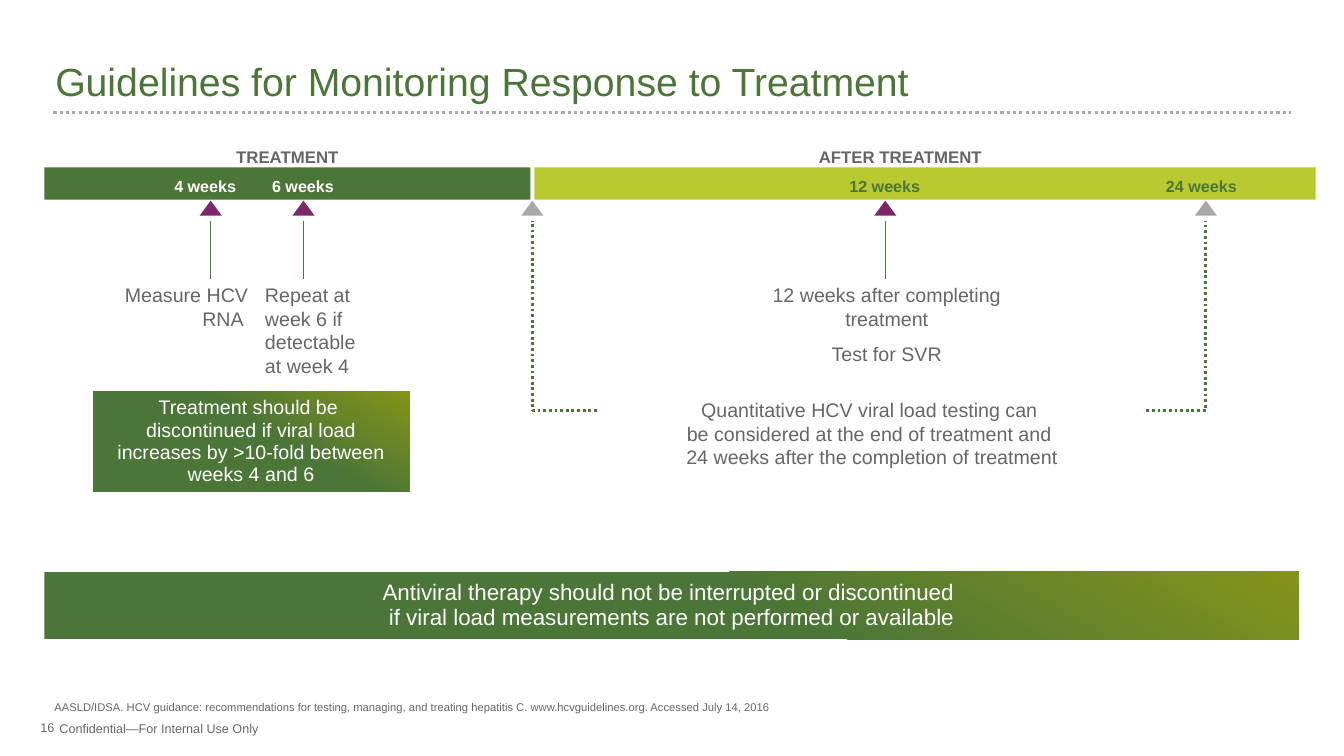
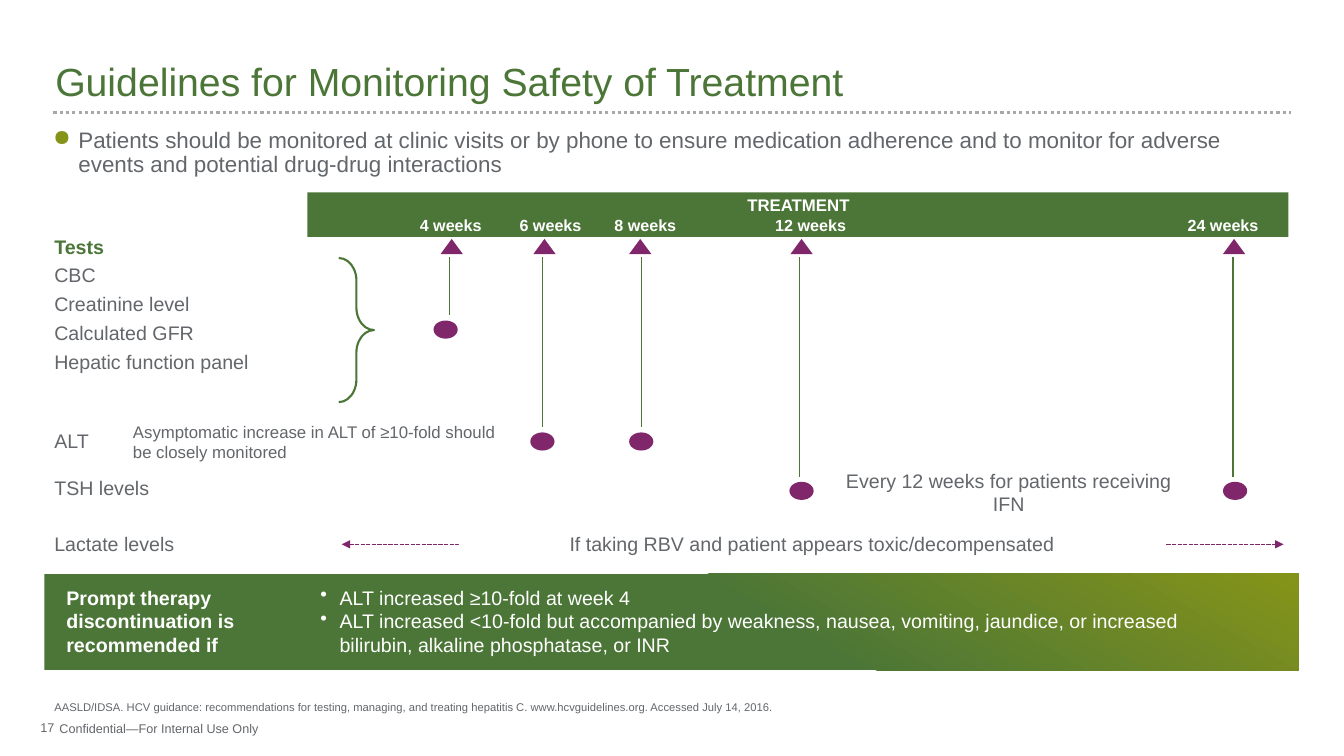
"""Build two slides on monitoring hepatitis C treatment, laid out on a grid of 0.1 inch cells."""
import copy
import dataclasses

import pptx
import pptx.dml.color
import pptx.enum.dml
import pptx.enum.shapes
import pptx.enum.text
import pptx.oxml.ns
import pptx.util

SHAPE = pptx.enum.shapes.MSO_SHAPE
ALIGN = pptx.enum.text.PP_ALIGN
ANCHOR = pptx.enum.text.MSO_ANCHOR
DASH = pptx.enum.dml.MSO_LINE
qn = pptx.oxml.ns.qn


@dataclasses.dataclass(frozen=True)
class Theme:
    font: str = "Arial"
    green: str = "4C7637"
    lime: str = "B8CA30"
    olive: str = "859419"
    plum: str = "80276C"
    grey: str = "A7A8AA"
    ink: str = "63666A"
    white: str = "FFFFFF"
    title: float = 28
    lead: float = 16
    body: float = 14
    small: float = 12
    week: float = 11.5
    footer: float = 9
    source: float = 8


T = Theme()
COLS, ROWS = 133.3, 75
DEFAULT_INSETS = (1, 0.5, 1, 0.5)
NO_INSETS = (0, 0, 0, 0)
CENTRE = {"alignment": ALIGN.CENTER}
TIGHT = {"line_spacing": 0.9}
PANEL_FORMAT = {"alignment": ALIGN.CENTER, "line_spacing": 0.95}
PANEL_FILL = (T.green, T.olive)
MARKER_W, MARKER_H = 2.2, 1.5
DOT_W, DOT_H = 2.4, 1.8
WEEK_W, WEEK_H = 10.9, 2


def cells(*values):
    return [pptx.util.Inches(v / 10) for v in values]


def rgb(color):
    return pptx.dml.color.RGBColor.from_string(color)


def set_all(obj, values):
    for name, value in values.items():
        setattr(obj, name, value)


def add_bullet(p, char, color, indent):
    pPr = p._p.get_or_add_pPr()
    hang = cells(indent)[0]
    pPr.set("marL", str(hang))
    pPr.set("indent", str(-hang))
    buClr = pPr.makeelement(qn("a:buClr"), {})
    buClr.append(buClr.makeelement(qn("a:srgbClr"), {"val": color}))
    pPr.append(buClr)
    pPr.append(pPr.makeelement(qn("a:buChar"), {"char": char}))


def write(tf, lines, size, color, bold=False, insets=DEFAULT_INSETS,
          anchor=ANCHOR.TOP, para=None, gap=0, bullet=None):
    left, top, right, bottom = cells(*insets)
    set_all(tf, {"word_wrap": True, "vertical_anchor": anchor,
                 "margin_left": left, "margin_top": top,
                 "margin_right": right, "margin_bottom": bottom})
    for i, line in enumerate(lines):
        p = tf.add_paragraph() if i else tf.paragraphs[0]
        p.text = line
        if bullet:
            add_bullet(p, *bullet)
        set_all(p, {"alignment": ALIGN.LEFT, **(para or {})})
        if i and gap:
            p.space_before = pptx.util.Pt(gap)
        for r in p.runs:
            set_all(r.font, {"name": T.font, "size": pptx.util.Pt(size), "bold": bold})
            r.font.color.rgb = rgb(color)
        for br in p._p.findall(qn("a:br")):
            br.append(copy.deepcopy(p.runs[0]._r.rPr))


def add_text(s, box, lines, size=T.body, color=T.ink, **fmt):
    sp = s.shapes.add_textbox(*cells(*box))
    write(sp.text_frame, [lines] if isinstance(lines, str) else lines, size, color, **fmt)


def style_line(line, color, width, dash=None):
    line.color.rgb = rgb(color)
    set_all(line, {"width": pptx.util.Pt(width), "dash_style": dash})


def add_block(s, kind, box, fill):
    sp = s.shapes.add_shape(kind, *cells(*box))
    sp.shadow.inherit = False
    sp.line.fill.background()
    if fill is None:
        sp.fill.background()
    elif isinstance(fill, tuple):
        sp.fill.gradient()
        sp.fill.gradient_angle = 60
        for stop, position, color in zip(sp.fill.gradient_stops, (0.57, 1), fill):
            stop.color.rgb = rgb(color)
            stop.position = position
    else:
        sp.fill.solid()
        sp.fill.fore_color.rgb = rgb(fill)
    return sp


def add_panel(s, box, text, size):
    sp = add_block(s, SHAPE.RECTANGLE, box, PANEL_FILL)
    write(sp.text_frame, [text], size, T.white, anchor=ANCHOR.MIDDLE, para=PANEL_FORMAT)


def add_line(s, start, end, color, width, dash=None, arrows=False):
    cn = s.shapes.add_connector(pptx.enum.shapes.MSO_CONNECTOR.STRAIGHT,
                                *cells(*start, *end))
    style_line(cn.line, color, width, dash)
    spPr = cn._element.spPr
    if arrows:
        ln = cn.line._get_or_add_ln()
        for tag in ("a:headEnd", "a:tailEnd"):
            ln.append(ln.makeelement(qn(tag), {"type": "triangle"}))
    spPr.append(spPr.makeelement(qn("a:effectLst"), {}))


def add_bracket(s, inner_x, outer_x, top, bottom):
    first, *rest = [cells(*pt) for pt in
                    ((inner_x, bottom), (outer_x, bottom), (outer_x, top))]
    builder = s.shapes.build_freeform(*first, scale=1.0)
    builder.add_line_segments(rest, close=False)
    sp = builder.convert_to_shape()
    sp.shadow.inherit = False
    sp.fill.background()
    style_line(sp.line, T.green, 2, DASH.ROUND_DOT)


def add_marker(s, x, top, color=T.plum):
    add_block(s, SHAPE.ISOSCELES_TRIANGLE, (x - MARKER_W / 2, top, MARKER_W, MARKER_H), color)


def add_stem(s, x, top, bottom):
    add_line(s, (x, top), (x, bottom), T.green, 1)


def add_dot(s, x, y):
    add_block(s, SHAPE.OVAL, (x - DOT_W / 2, y - DOT_H / 2, DOT_W, DOT_H), T.plum)


def add_week(s, weeks, x, y, color=T.white):
    add_text(s, (x - WEEK_W / 2, y - WEEK_H / 2, WEEK_W, WEEK_H), f"{weeks} weeks",
             T.week, color, bold=True, insets=NO_INSETS, anchor=ANCHOR.MIDDLE, para=CENTRE)


def add_heading(s, box, text, color=T.ink):
    add_text(s, box, text, T.small, color, bold=True, anchor=ANCHOR.MIDDLE,
             para={**CENTRE, **TIGHT})


def add_frame(prs, number, title, source):
    s = prs.slides.add_slide(prs.slide_layouts[6])
    footer = {"insets": NO_INSETS, "anchor": ANCHOR.BOTTOM}
    add_text(s, (0.7, 71.5, 4.7, 1.4), str(number), T.footer,
             para={"alignment": ALIGN.RIGHT, **TIGHT}, **footer)
    add_line(s, (5.3, 11.2), (128, 11.2), T.grey, 2.25, DASH.ROUND_DOT)
    add_text(s, (5.9, 71.5, 69.6, 1.5), "Confidential—For Internal Use Only",
             T.footer, para=TIGHT, **footer)
    add_text(s, (4.5, 1.3, 124.2, 9.6), title, T.title, T.green,
             anchor=ANCHOR.BOTTOM, para=TIGHT)
    add_text(s, (4.4, 66.8, 104.9, 4), source, T.source, insets=(1, 0, 0, 0),
             anchor=ANCHOR.BOTTOM, para=TIGHT)
    return s


def build_response(prs, source):
    s = add_frame(prs, 16, "Guidelines for Monitoring Response to Treatment", source)
    for x, width, color in ((4.4, 48.2, T.green), (53, 77.5, T.lime)):
        add_block(s, SHAPE.RECTANGLE, (x, 16.6, width, 3.2), color)
    add_heading(s, (4.4, 14.4, 48.2, 2.5), "TREATMENT")
    add_heading(s, (52.9, 14.4, 72.8, 2.5), "AFTER TREATMENT")

    for weeks, x, color in ((4, 20.35, T.white), (6, 30.05, T.white),
                            (12, 87.75, T.green), (24, 119.15, T.green)):
        add_week(s, weeks, x, 18.45, color)
    for x in (20.9, 30.1, 87.8):
        add_marker(s, x, 19.9)
        add_stem(s, x, 21.9, 27.7)
    for inner_x, outer_x in ((59.2, 52.8), (113.7, 119.6)):
        add_marker(s, outer_x, 19.9, T.grey)
        add_bracket(s, inner_x, outer_x, 21.9, 40.7)

    add_text(s, (10.5, 27.6, 15.1, 5.7), "Measure HCV RNA ", para={"alignment": ALIGN.RIGHT})
    add_text(s, (25.3, 27.6, 15.7, 10.4), "Repeat at \vweek 6 if \vdetectable \vat week 4")
    for box, text in (
            ((74, 27.6, 27.9, 5.7), "12 weeks after completing treatment"),
            ((78.3, 33.4, 19.3, 3.4), "Test for SVR"),
            ((58.6, 39, 55.8, 8.1),
             "Quantitative HCV viral load testing can \vbe considered at the end of "
             "treatment and \v24 weeks after the completion of treatment")):
        add_text(s, box, text, para=CENTRE)

    add_panel(s, (9.2, 38.8, 31.4, 10),
              "Treatment should be \vdiscontinued if viral load increases by >10-fold "
              "between weeks 4 and 6", T.body)
    add_panel(s, (4.4, 56.7, 124.4, 6.7),
              "Antiviral therapy should not be interrupted or discontinued \v"
              "if viral load measurements are not performed or available", T.lead)


def build_safety(prs, source):
    s = add_frame(prs, 17, "Guidelines for Monitoring Safety of Treatment", source)
    add_text(s, (4.3, 12.3, 124.4, 6),
             "Patients should be monitored at clinic visits or by phone to ensure medication "
             "adherence and to monitor for adverse events and potential drug-drug interactions",
             T.lead, para=TIGHT, bullet=("●", T.olive, 2.5))
    add_block(s, SHAPE.RECTANGLE, (30.5, 19.1, 97.3, 4.4), T.green)
    add_heading(s, (55.4, 19.2, 47.6, 2.5), "TREATMENT", T.white)

    for weeks, label_x, marker_x, stem_x, dot_x, dot_y in (
            (4, 44.7, 44.8, 44.6, 44.2, 32.7),
            (6, 54.6, 54, 53.8, 53.8, 43.8),
            (8, 64, 63.5, 63.6, 63.6, 43.8),
            (12, 80.4, 79.5, 79.3, 79.5, 48.7),
            (24, 121.3, 122.4, 122.3, 122.5, 48.7)):
        add_week(s, weeks, label_x, 22.3)
        add_marker(s, marker_x, 23.7)
        add_stem(s, stem_x, 25.5, dot_y - 1.4)
        add_dot(s, dot_x, dot_y)

    add_text(s, (4.4, 22.8, 21.7, 3.4), "Tests", color=T.green, bold=True)
    add_text(s, (4.4, 25.6, 29.4, 12.1),
             ("CBC", "Creatinine level", "Calculated GFR", "Hepatic function panel"), gap=4)
    for top, test in ((42.1, "ALT"), (46.7, "TSH levels"), (52.3, "Lactate levels")):
        add_text(s, (4.4, top, 26.5, 3.4), test)
    brace = add_block(s, SHAPE.RIGHT_BRACE, (33.6, 25.6, 3.5, 14.3), None)
    brace.adjustments[0] = 0.64
    style_line(brace.line, T.green, 1.5)
    add_text(s, (12.2, 41.3, 38.9, 5.1),
             "Asymptomatic increase in ALT of ≥10-fold should be closely monitored", T.small)
    add_text(s, (82.7, 46, 34.7, 5.7), "Every 12 weeks for patients receiving IFN", para=CENTRE)

    add_line(s, (33.9, 54), (127.3, 54), T.plum, 1, DASH.SQUARE_DOT, arrows=True)
    note = add_block(s, SHAPE.RECTANGLE, (45.5, 52.3, 70.1, 3.4), T.white)
    write(note.text_frame, ["If taking RBV and patient appears toxic/decompensated"],
          T.body, T.ink, para=CENTRE)

    add_block(s, SHAPE.RECTANGLE, (4.4, 56.9, 124.4, 9.6), PANEL_FILL)
    add_text(s, (5.6, 57.6, 24.9, 8.1), "Prompt therapy discontinuation is recommended if",
             color=T.white, bold=True)
    add_text(s, (30.8, 57.6, 94.7, 8.1),
             ("ALT increased ≥10-fold at week 4",
              "ALT increased <10-fold but accompanied by weakness, nausea, vomiting, jaundice, "
              "or increased bilirubin, alkaline phosphatase, or INR"),
             color=T.white, bullet=("•", T.white, 1.9))


def main():
    prs = pptx.Presentation()
    prs.slide_width, prs.slide_height = cells(COLS, ROWS)
    source = ("AASLD/IDSA. HCV guidance: recommendations for testing, managing, and treating "
              "hepatitis C. www.hcvguidelines.org. Accessed July 14, 2016")
    build_response(prs, source)
    build_safety(prs, source + ".")
    prs.save("out.pptx")


if __name__ == "__main__":
    main()
